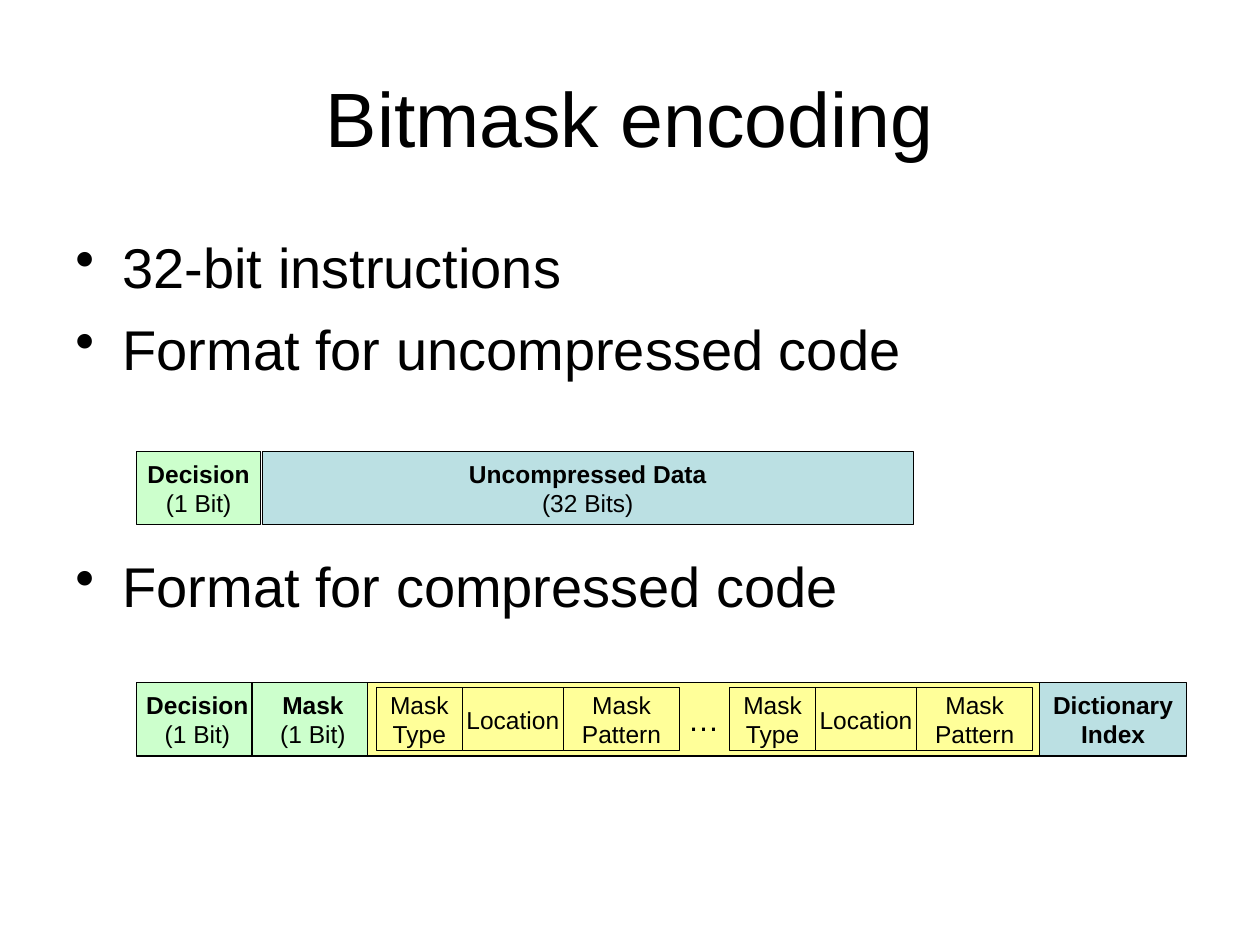
import pptx
import pptx.dml.color
import pptx.enum.shapes
import pptx.enum.text
import pptx.util
from dataclasses import dataclass
from lxml import etree
from pptx.util import Cm, Pt


@dataclass(frozen=True)
class Theme:
    font: str = "Arial"
    ink: str = "000000"
    green: str = "CCFFCC"
    blue: str = "BBE0E3"
    yellow: str = "FFFF99"
    title_size: int = 44
    body_size: int = 32
    dots_size: int = 18
    field_size: int = 14
    line_width: float = 0.75


THEME = Theme()

# Content: bullets carry the space before them in points
TITLE = "Bitmask encoding"
BULLETS = [
    ("32-bit instructions", 0),
    ("Format for uncompressed code", 8.3),
    ("Format for compressed code", 97.5),
]

# Fields: left and width in cm, fill, lines of (text, bold)
DECISION = [("Decision", True), ("(1 Bit)", False)]
UNCOMPRESSED = [
    (5.29, 13.12, THEME.blue, [("Uncompressed Data", True), ("(32 Bits)", False)]),
    (2.75, 2.51, THEME.green, DECISION),
]
COMPRESSED = [
    (2.75, 2.46, THEME.green, DECISION),
    (5.08, 2.46, THEME.green, [("Mask", True), ("(1 Bit)", False)]),
]
DICTIONARY = (20.96, 2.96, THEME.blue, [("Dictionary", True), ("Index", True)])

# Parts of one mask: width in cm and lines
MASK_PARTS = [
    (1.73, [("Mask", False), ("Type", False)]),
    (2.04, [("Location", False)]),
    (2.34, [("Mask", False), ("Pattern", False)]),
]
MASK_LEFTS = [7.59, 14.71]
MASK_FRAME = (7.41, 13.55, THEME.yellow, [("…", False)])

ROW_HEIGHT, PART_HEIGHT = 1.48, 1.27
UNCOMPRESSED_TOP, COMPRESSED_TOP = 9.1, 13.76


def color(value):
    return pptx.dml.color.RGBColor.from_string(value)


def add_text(frame, text, first=False, size=THEME.field_size, bold=False,
             align=pptx.enum.text.PP_ALIGN.CENTER, before=0, bullet=False):
    para = frame.paragraphs[0] if first else frame.add_paragraph()
    para.alignment = align
    para.space_before = Pt(before)
    span = para.add_run()
    span.text = text
    span.font.name = THEME.font
    span.font.size = Pt(size)
    span.font.bold = bold
    span.font.color.rgb = color(THEME.ink)
    if bullet:
        props = para._p.get_or_add_pPr()
        props.set("marL", str(Cm(0.95)))
        props.set("indent", str(-Cm(0.95)))
        mark = etree.SubElement(props, pptx.oxml.ns.qn("a:buChar"))
        mark.set("char", "•")


def add_field(shapes, top, height, left, width, fill, lines, size=THEME.field_size):
    box = shapes.add_shape(pptx.enum.shapes.MSO_SHAPE.RECTANGLE,
                           Cm(left), Cm(top), Cm(width), Cm(height))
    box.shadow.inherit = False
    box.fill.solid()
    box.fill.fore_color.rgb = color(fill)
    box.line.color.rgb = color(THEME.ink)
    box.line.width = Pt(THEME.line_width)
    box.text_frame.word_wrap = False
    box.text_frame.vertical_anchor = pptx.enum.text.MSO_ANCHOR.MIDDLE
    for index, (text, bold) in enumerate(lines):
        add_text(box.text_frame, text, first=index == 0, size=size, bold=bold)


def add_text_box(page, left, top, width, height, anchor):
    box = page.shapes.add_textbox(Cm(left), Cm(top), Cm(width), Cm(height))
    box.text_frame.word_wrap = True
    box.text_frame.vertical_anchor = anchor
    return box.text_frame


def main():
    deck = pptx.Presentation()
    deck.slide_width, deck.slide_height = Cm(25.4), Cm(19.05)
    page = deck.slides.add_slide(deck.slide_layouts[6])
    anchors = pptx.enum.text.MSO_ANCHOR

    # Title and bullets
    frame = add_text_box(page, 1.27, 0.76, 22.86, 3.18, anchors.MIDDLE)
    add_text(frame, TITLE, first=True, size=THEME.title_size)
    frame = add_text_box(page, 1.27, 4.56, 22.86, 12.46, anchors.TOP)
    for index, (text, before) in enumerate(BULLETS):
        add_text(frame, text, first=index == 0, size=THEME.body_size, before=before,
                 align=pptx.enum.text.PP_ALIGN.LEFT, bullet=True)

    # Plain fields of both formats
    for top, fields in ((UNCOMPRESSED_TOP, UNCOMPRESSED), (COMPRESSED_TOP, COMPRESSED)):
        for field in fields:
            add_field(page.shapes, top, ROW_HEIGHT, *field)

    # Group of repeated masks
    group = page.shapes.add_group_shape()
    add_field(group.shapes, COMPRESSED_TOP, ROW_HEIGHT, *MASK_FRAME, size=THEME.dots_size)
    part_top = COMPRESSED_TOP + (ROW_HEIGHT - PART_HEIGHT) / 2
    for left in MASK_LEFTS:
        for width, lines in MASK_PARTS:
            add_field(group.shapes, part_top, PART_HEIGHT, left, width, THEME.yellow, lines)
            left += width

    # Dictionary index
    add_field(page.shapes, COMPRESSED_TOP, ROW_HEIGHT, *DICTIONARY)
    deck.save("out.pptx")


if __name__ == "__main__":
    main()
